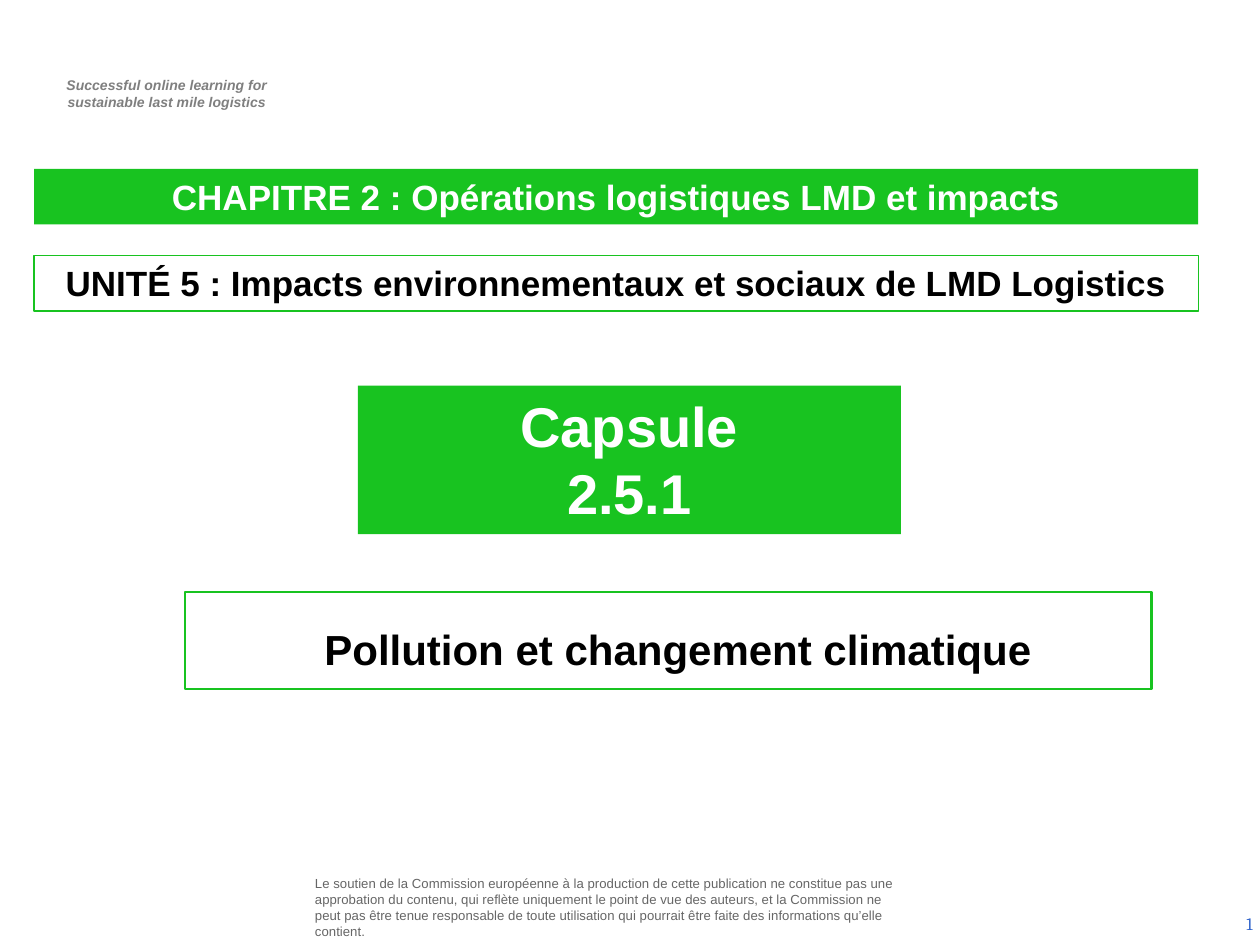
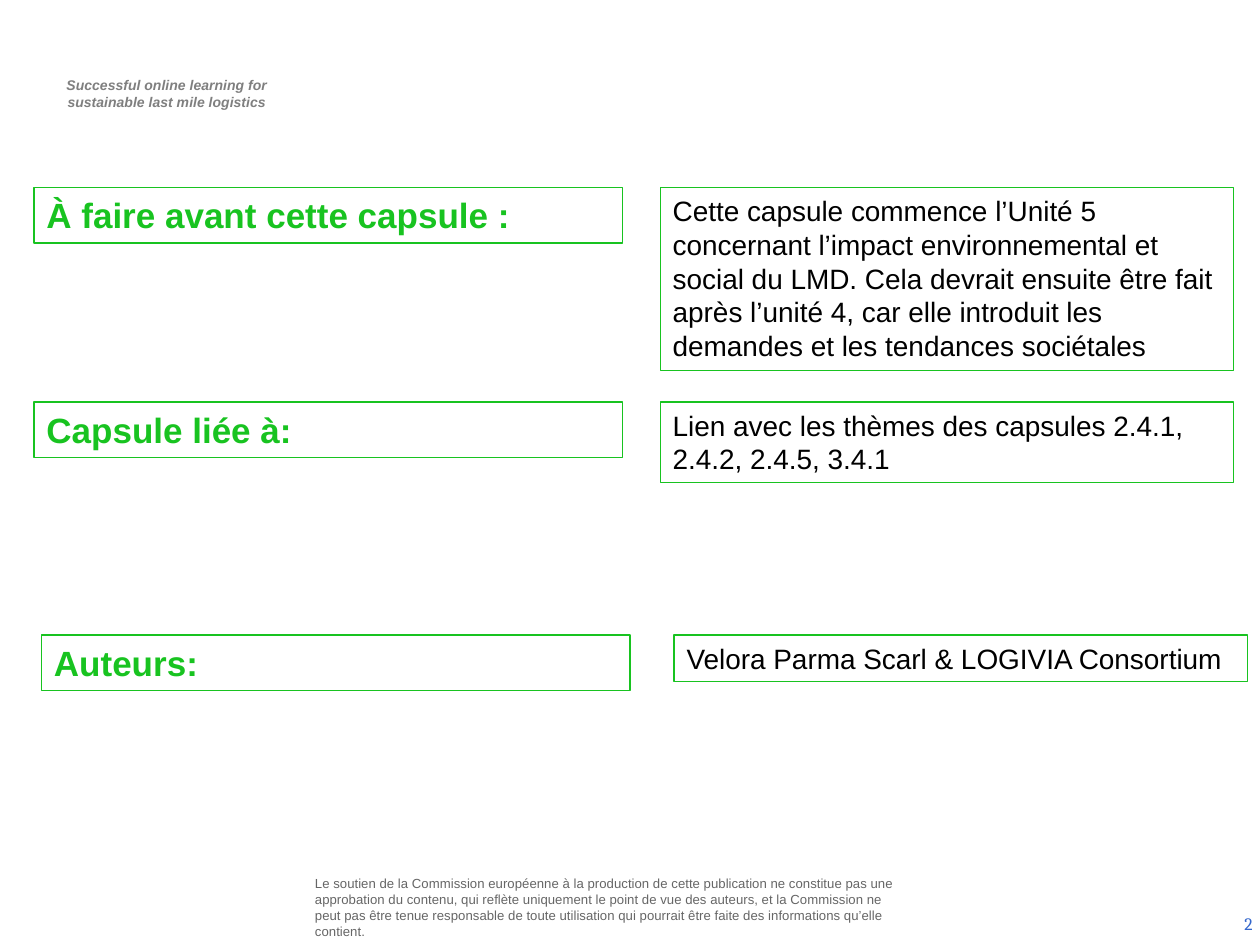
import pptx
import pptx.dml.color
import pptx.enum.shapes
import pptx.enum.text
import pptx.oxml
import pptx.oxml.ns
import pptx.util

Inches = pptx.util.Inches
Pt = pptx.util.Pt
ALIGN = pptx.enum.text.PP_ALIGN
ANCHOR = pptx.enum.text.MSO_ANCHOR
COLORS = {
    "green": "18C320",
    "white": "FFFFFF",
    "black": "000000",
    "tagline": "7F7F7F",
    "disclaimer": "666666",
    "number": "3366CC",
}


def color(name):
    return pptx.dml.color.RGBColor.from_string(COLORS[name])


def add_text(slide, text, box, size, ink="black", font="Arial", bold=False,
             italic=False, align=ALIGN.LEFT, anchor=ANCHOR.TOP,
             insets=(0.1, 0.05, 0.1, 0.05), fill=None, line=None, shape=None):
    """Put text, one paragraph per line, in a given shape, a rectangle or a text box."""
    position = [Inches(value) for value in box]
    if shape is not None:
        shape.left, shape.top, shape.width, shape.height = position
    elif fill or line:
        rectangle = pptx.enum.shapes.MSO_SHAPE.RECTANGLE
        shape = slide.shapes.add_shape(rectangle, *position)
        shape.shadow.inherit = False
    else:
        shape = slide.shapes.add_textbox(*position)

    if fill:
        shape.fill.solid()
        shape.fill.fore_color.rgb = color(fill)
    else:
        shape.fill.background()
    if line:
        shape.line.color.rgb = color("green")
        shape.line.width = Pt(line)
    else:
        shape.line.fill.background()

    frame = shape.text_frame
    frame.word_wrap = True
    frame.auto_size = pptx.enum.text.MSO_AUTO_SIZE.NONE
    frame.vertical_anchor = anchor
    (frame.margin_left, frame.margin_top,
     frame.margin_right, frame.margin_bottom) = [Inches(value) for value in insets]
    frame.text = text
    for paragraph in frame.paragraphs:
        paragraph.alignment = align
        for run in paragraph.runs:
            run.font.name = font
            run.font.size = Pt(size)
            run.font.bold = bold
            run.font.italic = italic
            run.font.color.rgb = color(ink)
    return shape


presentation = pptx.Presentation()
presentation.slide_width = Inches(10)
presentation.slide_height = Inches(7.5)
title_only, blank = presentation.slide_layouts[5], presentation.slide_layouts[6]
cover = presentation.slides.add_slide(title_only)
overview = presentation.slides.add_slide(blank)

# Tagline and disclaimer live on the slide master
tagline = add_text(
    cover, "Successful online learning for\nsustainable last mile logistics",
    (0.31, 0.56, 2.03, 0.37), 8, ink="tagline", bold=True, italic=True,
    align=ALIGN.CENTER)
disclaimer = add_text(
    cover,
    "Le soutien de la Commission européenne à la production de cette publication "
    "ne constitue pas une approbation du contenu, qui reflète uniquement le point "
    "de vue des auteurs, et la Commission ne peut pas être tenue responsable de "
    "toute utilisation qui pourrait être faite des informations qu’elle contient.",
    (2.46, 6.95, 4.73, 0.5), 7.5, ink="disclaimer", anchor=ANCHOR.MIDDLE,
    insets=(0.04, 0.04, 0.04, 0.04))
master_tree = presentation.slide_master.element.cSld.spTree
for shared_shape in (tagline, disclaimer):
    master_tree.append(shared_shape.element)

# Slide numbers are live fields
for number, slide in enumerate(presentation.slides, start=1):
    number_box = add_text(
        slide, str(number), (7.71, 7.13, 2.33, 0.4), 10, ink="number",
        font="Cambria", align=ALIGN.RIGHT, anchor=ANCHOR.MIDDLE)
    run = number_box.element.find(".//" + pptx.oxml.ns.qn("a:r"))
    field = pptx.oxml.parse_xml(
        f'<a:fld {pptx.oxml.ns.nsdecls("a")} type="slidenum" '
        'id="{B6F15528-21DE-4FAA-801E-634DDDAF4B2B}"/>')
    run.addprevious(field)
    field.extend(list(run))
    run.getparent().remove(run)

# Slide 1: chapter, unit, capsule and topic
centred = {"bold": True, "align": ALIGN.CENTER}
add_text(cover, "CHAPITRE 2 : Opérations logistiques LMD et impacts",
         (0.27, 1.34, 9.24, 0.44), 20, ink="white", fill="green",
         shape=cover.shapes.title, **centred)
add_text(cover, "UNITÉ 5 : Impacts environnementaux et sociaux de LMD Logistics",
         (0.27, 2.03, 9.24, 0.44), 20, line=0.75, **centred)
add_text(cover, "Capsule\n2.5.1", (2.84, 3.06, 4.31, 1.18), 32,
         ink="white", fill="green", **centred)
add_text(cover, "Pollution et changement climatique", (1.47, 4.7, 7.67, 0.77), 24,
         line=1.5, insets=(0.25, 0.25, 0.1, 0.05), **centred)

# Slide 2: each heading has its details on the right
overview_rows = [
    ("À faire avant cette capsule :", 0.27, 5.24, 1.49, 1.45,
     "Cette capsule commence l’Unité 5 concernant l’impact environnemental et "
     "social du LMD. Cela devrait ensuite être fait après l’unité 4, car elle "
     "introduit les demandes et les tendances sociétales"),
    ("Capsule liée à:", 0.27, 5.24, 3.19, 0.64,
     "Lien avec les thèmes des capsules 2.4.1, 2.4.2, 2.4.5, 3.4.1"),
    ("Auteurs:", 0.33, 5.35, 5.04, 0.37,
     "Velora Parma Scarl & LOGIVIA Consortium"),
]
outlined = {"fill": "white", "line": 0.75}
for heading, heading_left, details_left, top, details_height, details in overview_rows:
    add_text(overview, heading, (heading_left, top, 4.67, 0.44), 20,
             ink="green", bold=True, **outlined)
    add_text(overview, details, (details_left, top, 4.55, details_height), 16,
             **outlined)

presentation.save("out.pptx")
